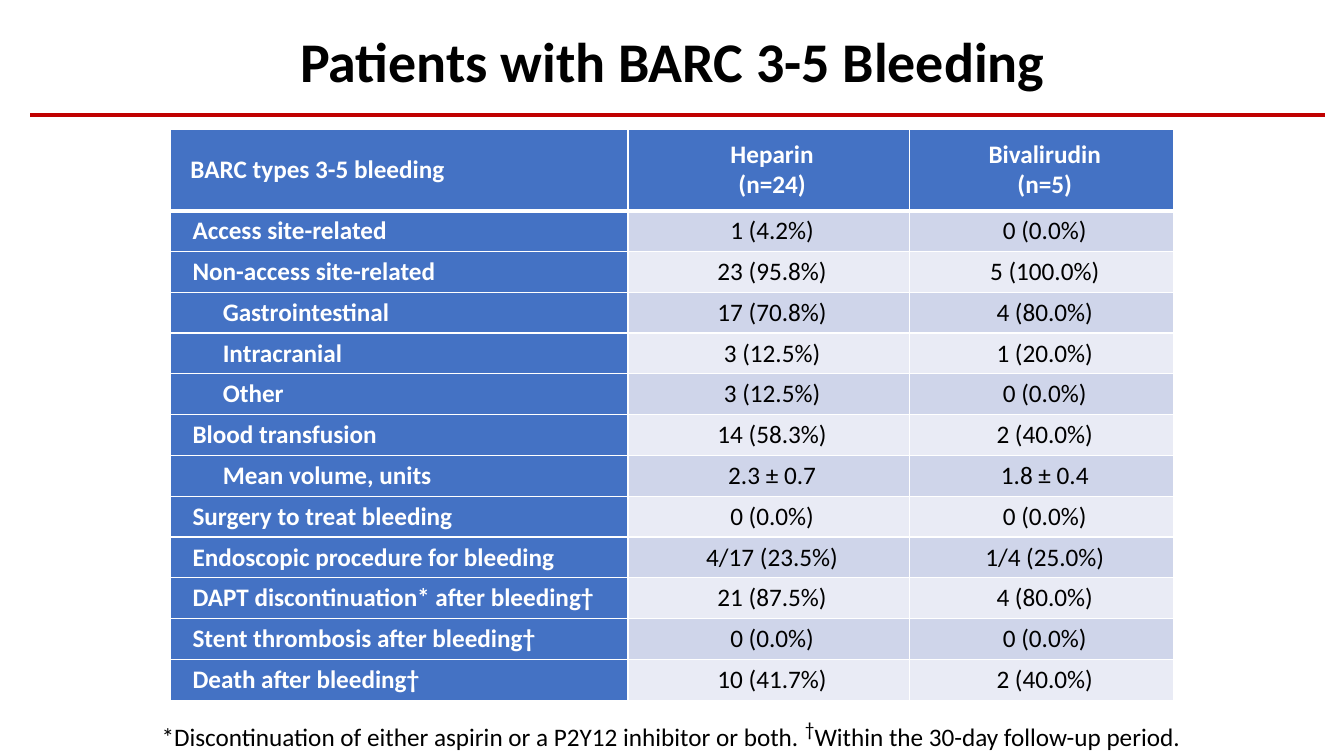
import pptx
import pptx.dml.color
import pptx.enum.shapes
import pptx.enum.text
import pptx.oxml
import pptx.oxml.ns
import pptx.util

COLORS = {
    "rule": "C00000",
    "heading": "4472C4",
    "odd_band": "CFD5EA",
    "even_band": "E9EBF5",
    "white": "FFFFFF",
    "black": "000000",
}
FONT = "Calibri"
SLIDE_WIDTH = pptx.util.Inches(13.33)
SLIDE_HEIGHT = pptx.util.Inches(7.5)
GRID_COLUMNS = 40
GRID_ROWS = 30

TABLE_COLUMNS = (13.62, 8.37, 7.86)
HEADER_HEIGHT = 3.24
ROW_HEIGHT = 1.62
HEADER_INDENT = 0.6
LEVEL_INDENTS = (0.66, 1.56)
VALUE_INDENT = 0.21

HEADER = ("BARC types 3-5 bleeding", "Heparin\n(n=24)", "Bivalirudin\n(n=5)")
OUTCOMES = (
    (0, "Access site-related", "1 (4.2%)", "0 (0.0%)"),
    (0, "Non-access site-related", "23 (95.8%)", "5 (100.0%)"),
    (1, "Gastrointestinal", "17 (70.8%)", "4 (80.0%)"),
    (1, "Intracranial", "3 (12.5%)", "1 (20.0%)"),
    (1, "Other", "3 (12.5%)", "0 (0.0%)"),
    (0, "Blood transfusion", "14 (58.3%)", "2 (40.0%)"),
    (1, "Mean volume, units", "2.3 ± 0.7", "1.8 ± 0.4"),
    (0, "Surgery to treat bleeding", "0 (0.0%)", "0 (0.0%)"),
    (0, "Endoscopic procedure for bleeding", "4/17 (23.5%)", "1/4 (25.0%)"),
    (0, "DAPT discontinuation* after bleeding†", "21 (87.5%)", "4 (80.0%)"),
    (0, "Stent thrombosis after bleeding†", "0 (0.0%)", "0 (0.0%)"),
    (0, "Death after bleeding†", "10 (41.7%)", "2 (40.0%)"),
)
FOOTNOTE = (
    ("*Discontinuation of either aspirin or a P2Y12 inhibitor or both. ", 18, False),
    ("†", 24, True),
    ("Within the 30-day follow-up period.", 18, False),
)


def across(columns):
    return round(SLIDE_WIDTH * columns / GRID_COLUMNS)


def down(rows):
    return round(SLIDE_HEIGHT * rows / GRID_ROWS)


def rgb(color):
    return pptx.dml.color.RGBColor.from_string(COLORS[color])


def format_run(run, size, color, bold=False):
    run.font.name = FONT
    run.font.size = pptx.util.Pt(size)
    run.font.bold = bold
    run.font.color.rgb = rgb(color)


def format_paragraphs(frame, size, color, bold, centered):
    align = pptx.enum.text.PP_ALIGN
    for paragraph in frame.paragraphs:
        paragraph.alignment = align.CENTER if centered else align.LEFT
        for run in paragraph.runs:
            format_run(run, size, color, bold)


def add_title(slide, wording):
    title = slide.shapes.title
    title.left, title.top = across(5.85), down(0.84)
    title.width, title.height = across(28.32), down(3.08)
    frame = title.text_frame
    frame.text = wording
    frame.word_wrap = True
    frame.auto_size = pptx.enum.text.MSO_AUTO_SIZE.NONE
    frame.vertical_anchor = pptx.enum.text.MSO_ANCHOR.MIDDLE
    format_paragraphs(frame, 40, "black", True, True)


def add_rule(slide):
    rule = slide.shapes.add_connector(
        pptx.enum.shapes.MSO_CONNECTOR.STRAIGHT,
        across(0.9), down(4.56), across(39.42), down(4.56),
    )
    rule.line.color.rgb = rgb("rule")
    rule.line.width = pptx.util.Pt(3)
    rule._element.spPr.append(pptx.oxml.parse_xml(
        f'<a:effectLst {pptx.oxml.ns.nsdecls("a")}/>'
    ))


def add_borders(cell, top=1, bottom=1):
    properties = cell._tc.get_or_add_tcPr()
    for side, points in (("L", 1), ("R", 1), ("T", top), ("B", bottom)):
        properties.append(pptx.oxml.parse_xml(
            f'<a:ln{side} {pptx.oxml.ns.nsdecls("a")} w="{pptx.util.Pt(points)}">'
            f'<a:solidFill><a:srgbClr val="{COLORS["white"]}"/></a:solidFill>'
            f'</a:ln{side}>'
        ))


def fill_cell(cell, wording, fill, color, bold, centered, indent):
    cell.fill.solid()
    cell.fill.fore_color.rgb = rgb(fill)
    cell.vertical_anchor = pptx.enum.text.MSO_ANCHOR.MIDDLE
    cell.margin_left = across(indent)
    cell.margin_right = cell.margin_top = cell.margin_bottom = 0
    cell.text_frame.text = wording
    format_paragraphs(cell.text_frame, 18, color, bold, centered)


def add_outcome_table(slide):
    heights = [HEADER_HEIGHT] + [ROW_HEIGHT] * len(OUTCOMES)
    table = slide.shapes.add_table(
        len(heights), len(TABLE_COLUMNS), across(5.07), down(5.12),
        across(sum(TABLE_COLUMNS)), down(sum(heights)),
    ).table
    table.first_row = table.horz_banding = False
    for column, width in zip(table.columns, TABLE_COLUMNS):
        column.width = across(width)
    for row, height in zip(table.rows, heights):
        row.height = down(height)

    for column, wording in enumerate(HEADER):
        cell = table.cell(0, column)
        add_borders(cell, bottom=3)
        indent = VALUE_INDENT if column else HEADER_INDENT
        fill_cell(cell, wording, "heading", "white", True, column > 0, indent)

    for row, (level, *wordings) in enumerate(OUTCOMES, 1):
        band = "odd_band" if row % 2 else "even_band"
        for column, wording in enumerate(wordings):
            cell = table.cell(row, column)
            add_borders(cell, top=3 if row == 1 else 1)
            if column:
                fill_cell(cell, wording, band, "black", False, True, VALUE_INDENT)
            else:
                fill_cell(cell, wording, "heading", "white", True, False,
                          LEVEL_INDENTS[level])


def add_footnote(slide):
    footnote = slide.shapes.add_textbox(across(0.69), down(28.08), across(38.55), down(1.6))
    frame = footnote.text_frame
    frame.word_wrap = True
    paragraph = frame.paragraphs[0]
    paragraph.alignment = pptx.enum.text.PP_ALIGN.CENTER
    for wording, size, raised in FOOTNOTE:
        run = paragraph.add_run()
        run.text = wording
        format_run(run, size, "black")
        if raised:
            run.font._element.set("baseline", "30000")


def main():
    presentation = pptx.Presentation()
    presentation.slide_width = SLIDE_WIDTH
    presentation.slide_height = SLIDE_HEIGHT
    slide = presentation.slides.add_slide(presentation.slide_layouts[5])
    add_rule(slide)
    add_title(slide, "Patients with BARC 3-5 Bleeding")
    add_outcome_table(slide)
    add_footnote(slide)
    presentation.save("out.pptx")


if __name__ == "__main__":
    main()
